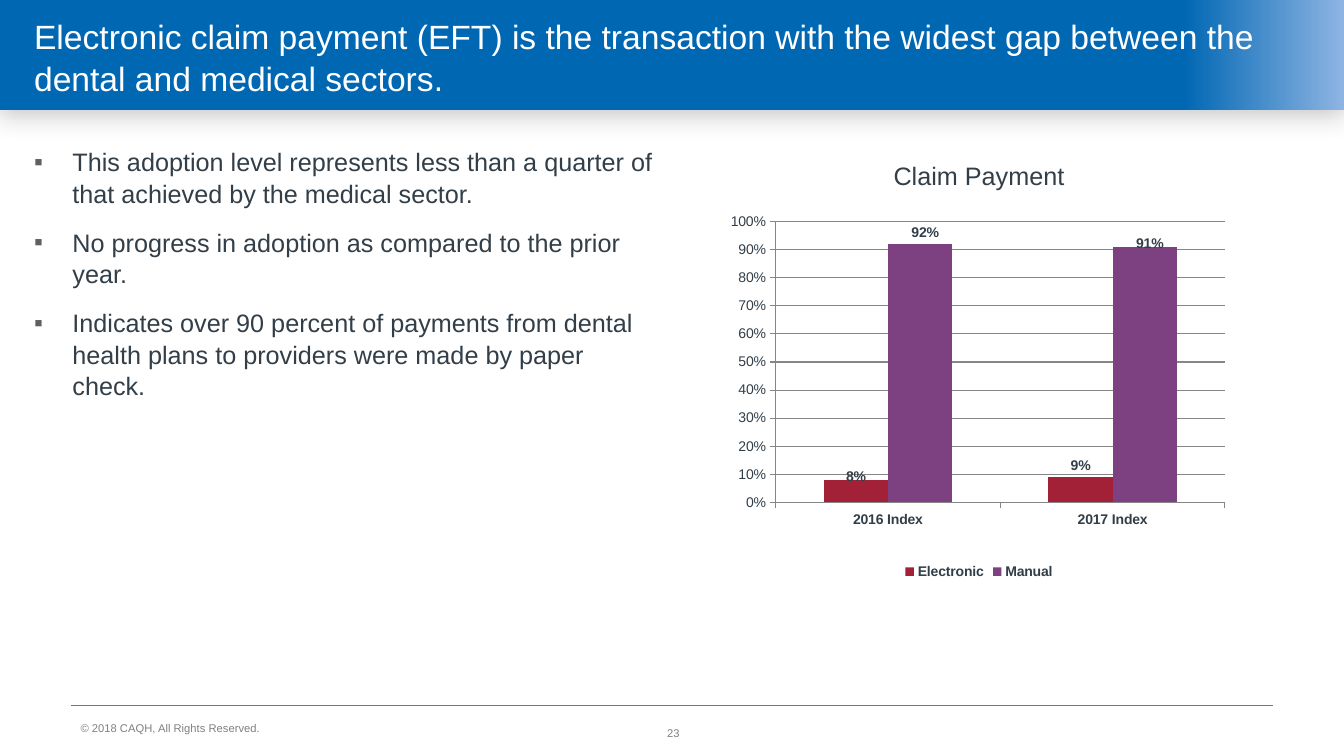
from lxml.etree import SubElement
from pptx import Presentation
from pptx.chart.data import CategoryChartData
from pptx.dml.color import RGBColor
from pptx.enum.chart import XL_CHART_TYPE, XL_LABEL_POSITION, XL_LEGEND_POSITION, XL_TICK_MARK
from pptx.enum.shapes import MSO_CONNECTOR, MSO_SHAPE
from pptx.enum.text import MSO_ANCHOR, PP_ALIGN
from pptx.oxml import parse_xml
from pptx.oxml.ns import nsdecls, qn
from pptx.util import Inches, Pt

FONT = "Arial"
INK, GREY, BLUE, AXIS = "323E48", "808080", "0067B3", "868686"
POINTS = [
    "This adoption level represents less than a quarter of that achieved by the medical sector.",
    "No progress in adoption as compared to the prior year.",
    "Indicates over 90 percent of payments from dental health plans to providers "
    "were made by paper check.",
]
SERIES = [("Electronic", (0.08, 0.09), "A32136"), ("Manual", (0.92, 0.91), "7D4182")]
# (series, point): label shift as a share of the chart size
SHIFTS = {(0, 0): (0, 0.02), (1, 0): (0.01, 0), (1, 1): (0.01, 0.02)}


def color(text):
    return RGBColor.from_string(text)


def style(font, size, tint, bold=False):
    font.name, font.size, font.bold = FONT, Pt(size), bold
    font.color.rgb = color(tint)


def add_text(slide, box, lines, size, tint, anchor=MSO_ANCHOR.TOP,
             align=PP_ALIGN.LEFT, space=1.0, bullet=False):
    frame = slide.shapes.add_textbox(*map(Inches, box)).text_frame
    frame.word_wrap = True
    frame.vertical_anchor = anchor
    for i, line in enumerate(lines):
        par = frame.paragraphs[0] if i == 0 else frame.add_paragraph()
        if bullet:
            add_bullet(par)
        par.alignment = align
        par.line_spacing = space
        if i:
            par.space_before = Pt(12)
        run = par.add_run()
        run.text = line
        style(run.font, size, tint)


def add_bullet(par):
    props = par._p.get_or_add_pPr()
    props.set("marL", str(Inches(0.38)))
    props.set("indent", str(-Inches(0.38)))
    tint = SubElement(props, qn("a:buClr"))
    SubElement(tint, qn("a:srgbClr"), val="606060")
    SubElement(props, qn("a:buFont"), typeface=FONT)
    SubElement(props, qn("a:buChar"), char="▪")


def add_banner(slide, box, title):
    left, top, width, height = box
    band = slide.shapes.add_shape(MSO_SHAPE.RECTANGLE, *map(Inches, box))
    band.line.fill.background()
    band.shadow.inherit = False
    props = band._element.spPr
    stops = "".join(
        f'<a:gs pos="{pos * 1000}"><a:srgbClr val="{tint}"/></a:gs>'
        for pos, tint in [(0, BLUE), (88, BLUE), (100, "8EB4E3")])
    props.find(qn("a:prstGeom")).addnext(parse_xml(
        f'<a:gradFill {nsdecls("a")} rotWithShape="1"><a:gsLst>{stops}</a:gsLst>'
        '<a:lin ang="0" scaled="0"/></a:gradFill>'))
    props.find(qn("a:effectLst")).append(parse_xml(
        f'<a:outerShdw {nsdecls("a")} blurRad="{Pt(18)}" dist="{Pt(3)}" dir="{102 * 60000}" '
        f'rotWithShape="0"><a:srgbClr val="{GREY}"><a:alpha val="43000"/></a:srgbClr>'
        '</a:outerShdw>'))
    add_text(slide, (left + 0.24, top + 0.15, width - 0.46, height - 0.28), [title],
             24, "FFFFFF", MSO_ANCHOR.MIDDLE, space=1.05)


def add_footer(slide, box, note, number):
    left, top, width, height = box
    rule = slide.shapes.add_connector(
        MSO_CONNECTOR.STRAIGHT, Inches(left), Inches(top), Inches(left + width), Inches(top))
    rule.line.color.rgb = color("4A7EBB")
    rule.line.width = Pt(0.75)
    SubElement(rule._element.spPr, qn("a:effectLst"))
    add_text(slide, (left, top + 0.03, 4.92, 0.31), [note], 8, GREY, MSO_ANCHOR.BOTTOM)
    add_text(slide, (left + 4.48, top + 0.07, 3, height - 0.07), [number], 8, GREY,
             MSO_ANCHOR.MIDDLE, PP_ALIGN.CENTER)


def make_layout(values, inner=False):
    """Return a manual chart layout from (name, value) pairs."""
    parts = '<c:layoutTarget val="inner"/>' if inner else ""
    if inner:
        parts += '<c:xMode val="edge"/><c:yMode val="edge"/>'
    parts += "".join(f'<c:{name} val="{value}"/>' for name, value in values)
    return parse_xml(f'<c:layout {nsdecls("c")}><c:manualLayout>{parts}'
                     '</c:manualLayout></c:layout>')


def style_axis(axis, bold):
    style(axis.tick_labels.font, 10, INK, bold)
    axis.major_tick_mark = XL_TICK_MARK.OUTSIDE
    axis.minor_tick_mark = XL_TICK_MARK.NONE
    axis.format.line.color.rgb = color(AXIS)
    axis.format.line.width = Pt(0.75)


def style_series(bars, index, tint):
    bars.format.fill.solid()
    bars.format.fill.fore_color.rgb = color(tint)
    bars.invert_if_negative = False
    labels = bars.data_labels
    labels.show_value = True
    labels.number_format, labels.number_format_is_linked = "0%", False
    labels.position = XL_LABEL_POSITION.OUTSIDE_END
    style(labels.font, 10, INK, True)
    for (row, spot), shift in SHIFTS.items():
        if row != index:
            continue
        label = bars.points[spot].data_label
        style(label.font, 10, INK, True)
        label.position = XL_LABEL_POSITION.OUTSIDE_END
        mark = bars._element.xpath(f"c:dLbls/c:dLbl/c:idx[@val='{spot}']")[0]
        mark.addnext(make_layout(zip("xy", shift)))


def add_chart(slide, box, title):
    data = CategoryChartData(number_format="0%")
    data.categories = ["2016 Index", "2017 Index"]
    for name, values, _ in SERIES:
        data.add_series(name, values)
    chart = slide.shapes.add_chart(
        XL_CHART_TYPE.COLUMN_CLUSTERED, *map(Inches, box), data).chart
    style(chart.font, 10, INK)
    chart.has_title = True
    run = chart.chart_title.text_frame.paragraphs[0].add_run()
    run.text = title
    style(run.font, 18, INK)
    chart.chart_title.include_in_layout = False

    chart.has_legend = True
    chart.legend.position = XL_LEGEND_POSITION.BOTTOM
    chart.legend.include_in_layout = False
    style(chart.legend.font, 10, INK, True)

    style_axis(chart.category_axis, True)
    scale = chart.value_axis
    style_axis(scale, False)
    scale.minimum_scale, scale.maximum_scale, scale.major_unit = 0, 1, 0.1
    scale.tick_labels.number_format = "0%"
    scale.tick_labels.number_format_is_linked = False
    scale.major_gridlines.format.line.color.rgb = color(AXIS)
    scale.major_gridlines.format.line.width = Pt(0.75)

    plot = chart.plots[0]
    plot.gap_width, plot.overlap, plot.vary_by_categories = 150, 0, False
    for i, (bars, (_, _, tint)) in enumerate(zip(plot.series, SERIES)):
        style_series(bars, i, tint)
    area = chart._chartSpace.chart.plotArea
    for old in area.findall(qn("c:layout")):
        area.remove(old)
    area.insert(0, make_layout(zip("xywh", (0.095, 0.184, 0.895, 0.633)), True))


def main():
    deck = Presentation()
    deck.slide_width, deck.slide_height = Inches(13.33), Inches(7.5)
    slide = deck.slides.add_slide(deck.slide_layouts[6])
    add_banner(slide, (0, 0, 13.33, 1.09),
               "Electronic claim payment (EFT) is the transaction with the widest gap "
               "between the dental and medical sectors.")
    add_text(slide, (0.24, 1.39, 6.42, 5.28), POINTS, 18, INK, space=1.05, bullet=True)
    add_chart(slide, (7.22, 1.39, 4.98, 4.4), "Claim Payment")
    add_footer(slide, (0.7, 7, 11.93, 0.47), "© 2018 CAQH, All Rights Reserved.", "23")
    deck.save("out.pptx")


if __name__ == "__main__":
    main()
